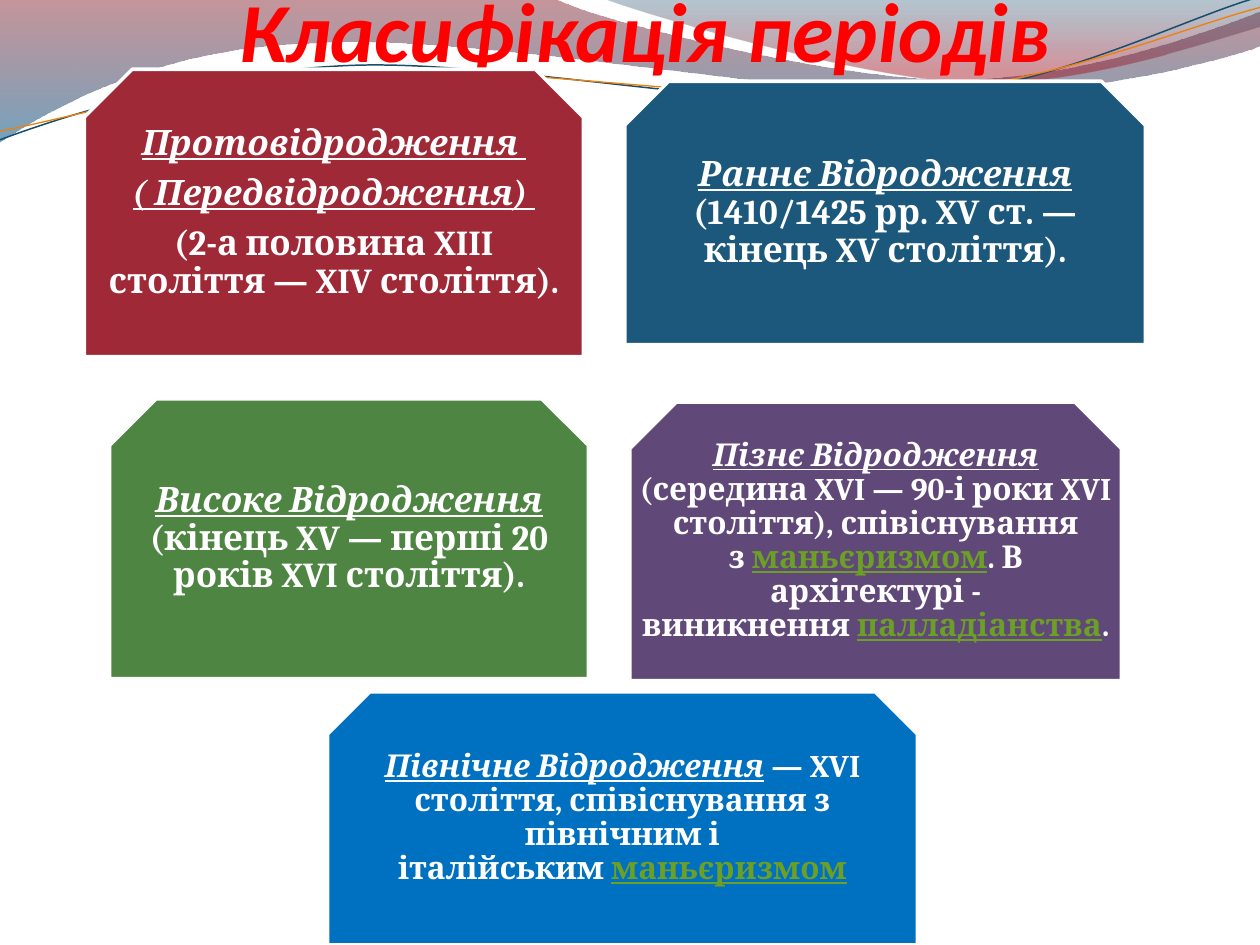
import dataclasses
import math

import pptx
import pptx.util
import pptx.dml.color
import pptx.enum.shapes
import pptx.enum.text
import pptx.oxml
import pptx.oxml.ns


@dataclasses.dataclass(frozen=True)
class Theme:
    head: str = "Calibri"
    body: str = "Cambria"
    title: int = 48
    large: int = 20
    small: int = 18
    white: str = "FFFFFF"
    red: str = "FF0000"
    link: str = "6B9F25"
    cards: tuple = ("9F2936", "1B587C", "4E8542", "604878", "0070C0")
    bands: tuple = (((0, "7E1621", 45), (1, "005689", 55)),
                    ((0, "094467", 30), (0.8, "A10F1F", 45)))
    lines: tuple = (("184E6D", 0.85), ("F07F09", 0.75))


THEME = Theme()
WIDE, HIGH = 10, 7.5
TILT = 2.7
HARD = chr(160)

BANDS = (
    [(0, 0), (4.4, -0.01), (4.76, 0.17, 6.64, 0.63, 7.58, 0.63),
     (8.53, 0.63, 9.58, 0.26, 10, 0.09), (10.01, 0.36),
     (9.83, 0.44, 8.7, 0.76, 7.46, 0.75), (6.22, 0.75, 3.82, 0.28, 2.57, 0.34),
     (1.29, 0.36, 0.46, 0.83, -0.01, 1.13), (0, 0)],
    [(4.79, -0.01), (5.09, 0.11, 6.82, 0.62, 7.69, 0.65),
     (8.56, 0.69, 9.61, 0.32, 10, 0.21), (10, 0), (4.79, -0.01)],
)
LINES = (
    [(0, 1.11), (0.48, 0.93, 1.58, 0.57, 2.77, 0.52),
     (3.95, 0.47, 5.93, 0.89, 7.13, 0.8), (8.33, 0.71, 9.38, 0.15, 9.98, -0.02)],
    [(0, 1.04), (0.47, 0.96, 1.64, 0.61, 2.83, 0.56),
     (4.03, 0.51, 5.97, 0.84, 7.17, 0.75), (8.36, 0.67, 9.41, 0.21, 10, 0.06)],
)

NAME = {"italic": True, "under": True}
LINK = {"color": THEME.link, "under": True}
CARDS = (
    ((6.7, 7.33, 39.6, 30.4), THEME.large, 0.08,
     [[("Протовідродження ", NAME)], [("( Передвідродження) ", NAME)],
      [(f"(2-а половина XIII століття{HARD}— XIV століття).", {})]]),
    ((49.6, 8.6, 41.3, 27.87), THEME.large, 0.08,
     [[("Раннє Відродження ", NAME),
       (f"(1410/1425 рр. XV ст.{HARD}— кінець XV століття).", {})]]),
    ((8.7, 42.2, 38, 29.6), THEME.large, 0.08,
     [[("Високе Відродження ", NAME),
       (f"(кінець XV{HARD}— перші 20 років XVI століття).", {})]]),
    ((50, 42.55, 39, 29.47), THEME.small, 0.07,
     [[("Пізнє Відродження ", NAME),
       (f"(середина XVI{HARD}— 90-і роки XVI століття), співіснування з{HARD}", {}),
       ("маньєризмом", LINK), (f". В архітектурі - виникнення{HARD}", {}),
       ("палладіанства", LINK), (".", {})]]),
    ((26, 73.2, 46.8, 26.8), THEME.small, 0.07,
     [[("Північне Відродження", NAME),
       (f"{HARD}— XVI століття, співіснування з північним і італійським{HARD}", {}),
       ("маньєризмом", LINK)]]),
)


def tint(code):
    return pptx.dml.color.RGBColor.from_string(code)


def place(box):
    return [pptx.util.Inches(part * size / 100)
            for part, size in zip(box, (WIDE, HIGH, WIDE, HIGH))]


def write(para, text, font=THEME.body, size=THEME.large, color=THEME.white,
          italic=False, under=False):
    run = para.add_run()
    run.text = text
    run.font.name = font
    run.font.size = pptx.util.Pt(size)
    run.font.bold = True
    run.font.italic = italic
    run.font.underline = under
    run.font.color.rgb = tint(color)
    para.alignment = pptx.enum.text.PP_ALIGN.CENTER


def frame(shape, anchor, pads):
    area = shape.text_frame
    area.word_wrap = True
    area.auto_size = pptx.enum.text.MSO_AUTO_SIZE.NONE
    area.vertical_anchor = anchor
    (area.margin_left, area.margin_top,
     area.margin_right, area.margin_bottom) = map(pptx.util.Inches, pads)
    return area


def turn(x, y, angle):
    cos, sin = math.cos(math.radians(angle)), math.sin(math.radians(angle))
    return x * cos - y * sin, x * sin + y * cos


def draw(slide, parts, close=False, tilt=0):
    qn = pptx.oxml.ns.qn
    pairs = [part[at:at + 2] for part in parts for at in range(0, len(part), 2)]
    first, *rest = [tuple(map(pptx.util.Inches, turn(*pair, tilt)))
                    for pair in pairs]
    pen = slide.shapes.build_freeform(*first)
    pen.add_line_segments(rest, close=close)
    shape = pen.convert_to_shape()
    shape.shadow.inherit = False
    nodes = iter(list(shape.element.iter(qn("a:lnTo"))))
    for part in parts[1:]:
        group = [next(nodes) for _ in range(len(part) // 2)]
        if len(group) == 3:
            bend = group[0].makeelement(qn("a:cubicBezTo"), {})
            group[0].addprevious(bend)
            for node in group:
                bend.append(node[0])
                node.getparent().remove(node)
    mid = shape.left + shape.width / 2, shape.top + shape.height / 2
    x, y = turn(*mid, -tilt)
    shape.left = round(x - shape.width / 2)
    shape.top = round(y - shape.height / 2)
    shape.rotation = -tilt
    return shape


def band(slide, parts, stops):
    shape = draw(slide, parts, close=True)
    shape.fill.gradient()
    shape.fill.gradient_angle = 270
    for stop, (spot, code, _) in zip(shape.fill.gradient_stops, stops):
        stop.position = spot
        stop.color.rgb = tint(code)
    shape.line.fill.background()
    qn = pptx.oxml.ns.qn
    for node, (_, _, share) in zip(shape.element.iter(qn("a:srgbClr")), stops):
        alpha = node.makeelement(qn("a:alpha"), {"val": str(share * 1000)})
        node.append(alpha)


def curve(slide, parts, color, width):
    shape = draw(slide, parts, tilt=TILT)
    shape.fill.background()
    shape.line.color.rgb = tint(color)
    shape.line.width = pptx.util.Pt(width)


def head(slide, text):
    title = slide.shapes.title
    title.left, title.top, title.width, title.height = place(
        (13.3, -3.12, 77.3, 11.47))
    qn = pptx.oxml.ns.qn
    form = title.element.spPr.makeelement(qn("a:prstGeom"), {"prst": "roundRect"})
    form.append(form.makeelement(qn("a:avLst"), {}))
    title.element.spPr.append(form)
    area = frame(title, pptx.enum.text.MSO_ANCHOR.BOTTOM, (0, 0.05, 0, 0))
    write(area.paragraphs[0], text, font=THEME.head, size=THEME.title,
          color=THEME.red, italic=True)
    slide.shapes.element.append(title.element)


def card(slide, fill, box, size, pad, paras):
    spot = place(box)
    kind = pptx.enum.shapes.MSO_SHAPE.SNIP_2_SAME_RECTANGLE
    shape = slide.shapes.add_shape(kind, *spot)
    shape.shadow.inherit = False
    shape.fill.solid()
    shape.fill.fore_color.rgb = tint(fill)
    shape.line.color.rgb = tint(THEME.white)
    shape.line.width = pptx.util.Pt(2)
    area = frame(slide.shapes.add_textbox(*spot),
                 pptx.enum.text.MSO_ANCHOR.MIDDLE, [pad] * 4)
    for rank, runs in enumerate(paras):
        para = area.add_paragraph() if rank else area.paragraphs[0]
        para.line_spacing = 0.9
        para.space_after = pptx.util.Pt(round(size * 0.35, 1))
        for text, form in runs:
            write(para, text, size=size, **form)


def main():
    deck = pptx.Presentation()
    deck.slide_width = pptx.util.Inches(WIDE)
    deck.slide_height = pptx.util.Inches(HIGH)
    slide = deck.slides.add_slide(deck.slide_layouts[5])
    for parts, stops in zip(BANDS, THEME.bands):
        band(slide, parts, stops)
    for parts, style in zip(LINES, THEME.lines):
        curve(slide, parts, *style)
    head(slide, "Класифікація періодів ")
    for fill, data in zip(THEME.cards, CARDS):
        card(slide, fill, *data)
    deck.save("out.pptx")


if __name__ == "__main__":
    main()
